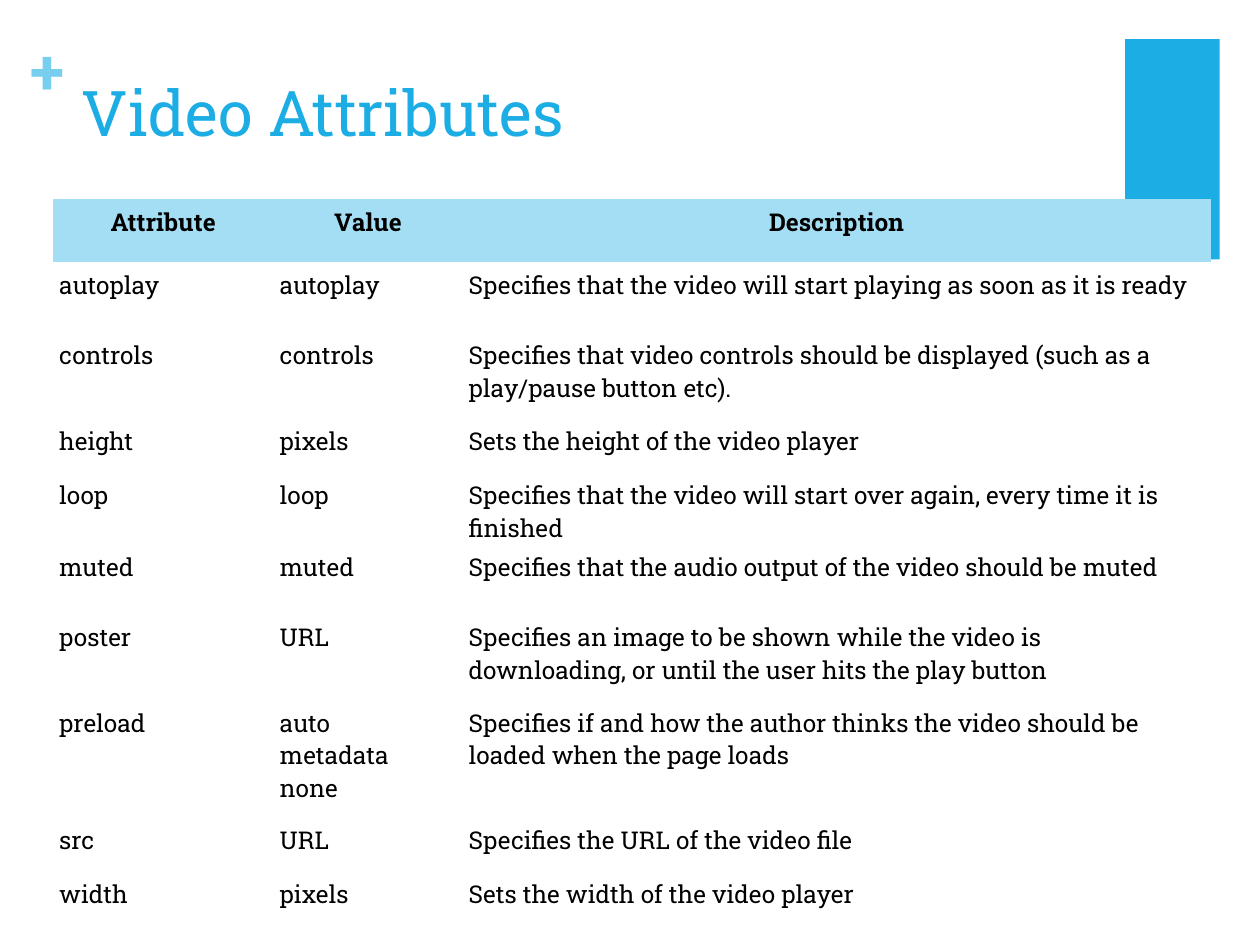
from pptx import Presentation
from pptx.dml.color import RGBColor as Rgb
from pptx.enum.shapes import MSO_SHAPE as Shape
from pptx.enum.text import MSO_ANCHOR as Anchor, PP_ALIGN as Align
from pptx.oxml.ns import qn
from pptx.util import Inches, Pt

FONT = "Roboto Slab"
COLORS = {"blue": "1CADE4", "plus": "77CEEF", "head": "A4DEF4", "text": "000000"}
PLAIN = "{2D5ABB26-0587-4C30-8999-92F81FD0307C}"
COLS = [1.75, 1.5, 5.94]
HEIGHTS = [0.5, 0.56, 0.68, 0.43, 0.56, 0.56, 0.68, 0.93, 0.43, 0.43]
ROWS = [
    ("Attribute", "Value", "Description"),
    ("autoplay", "autoplay", "Specifies that the video will start playing as soon as it is ready"),
    ("controls", "controls",
     "Specifies that video controls should be displayed (such as a play/pause button etc)."),
    ("height", "pixels", "Sets the height of the video player"),
    ("loop", "loop", "Specifies that the video will start over again, every time it is finished"),
    ("muted", "muted", "Specifies that the audio output of the video should be muted"),
    ("poster", "URL",
     "Specifies an image to be shown while the video is downloading, "
     "or until the user hits the play button"),
    ("preload", "auto\vmetadata\vnone",
     "Specifies if and how the author thinks the video should be loaded when the page loads"),
    ("src", "URL", "Specifies the URL of the video file"),
    ("width", "pixels", "Sets the width of the video player"),
]


def paint(fill, color):
    fill.solid()
    fill.fore_color.rgb = Rgb.from_string(COLORS[color])


def write(frame, text, size, color, bold=False, align=Align.LEFT, inset=0.05):
    frame.text = text
    frame.word_wrap = True
    frame.margin_left = frame.margin_right = Inches(inset)
    frame.margin_top = frame.margin_bottom = Inches(inset)
    para = frame.paragraphs[0]
    para.alignment = align
    font = para.font
    font.name, font.size, font.bold = FONT, Pt(size), bold
    font.color.rgb = Rgb.from_string(COLORS[color])


def add_block(slide):
    block = slide.shapes.add_shape(
        Shape.RECTANGLE, Inches(8.93), Inches(0.31), Inches(0.75), Inches(1.75))
    block.shadow.inherit = False
    paint(block.fill, "blue")
    block.line.fill.background()


def add_plus(slide):
    box = slide.shapes.add_textbox(Inches(0.24), Inches(0.25), Inches(0.29), Inches(0.61))
    write(box.text_frame, "+", 36, "plus", bold=True, inset=0)


def set_title(slide, text):
    title = slide.shapes.title
    title.left, title.top = Inches(0.55), Inches(0.53)
    title.width, title.height = Inches(8.26), Inches(1.22)
    write(title.text_frame, text, 36, "blue", inset=0.1)
    title.text_frame.margin_top = title.text_frame.margin_bottom = Inches(0.05)
    title.text_frame.vertical_anchor = Anchor.TOP


def fill_cell(cell, text, head):
    write(cell.text_frame, text, 14, "text", bold=head,
          align=Align.CENTER if head else Align.LEFT)
    cell.margin_left = cell.margin_right = Inches(0.05)
    cell.margin_top = cell.margin_bottom = Inches(0.05)
    if head:
        paint(cell.fill, "head")
    else:
        cell.fill.background()


def add_grid(slide):
    frame = slide.shapes.add_table(
        len(ROWS), len(COLS), Inches(0.42), Inches(1.58),
        Inches(sum(COLS)), Inches(sum(HEIGHTS)))
    table = frame.table
    table.first_row = table.horz_banding = False
    frame._element.find(".//" + qn("a:tableStyleId")).text = PLAIN
    for col, width in zip(table.columns, COLS):
        col.width = Inches(width)
    for i, (row, height) in enumerate(zip(table.rows, HEIGHTS)):
        row.height = Inches(height)
        for cell, text in zip(row.cells, ROWS[i]):
            fill_cell(cell, text, i == 0)


def main():
    deck = Presentation()
    deck.slide_width, deck.slide_height = Inches(10), Inches(7.5)
    slide = deck.slides.add_slide(deck.slide_layouts[5])
    add_block(slide)
    add_plus(slide)
    set_title(slide, "Video Attributes")
    add_grid(slide)
    deck.save("out.pptx")


if __name__ == "__main__":
    main()
